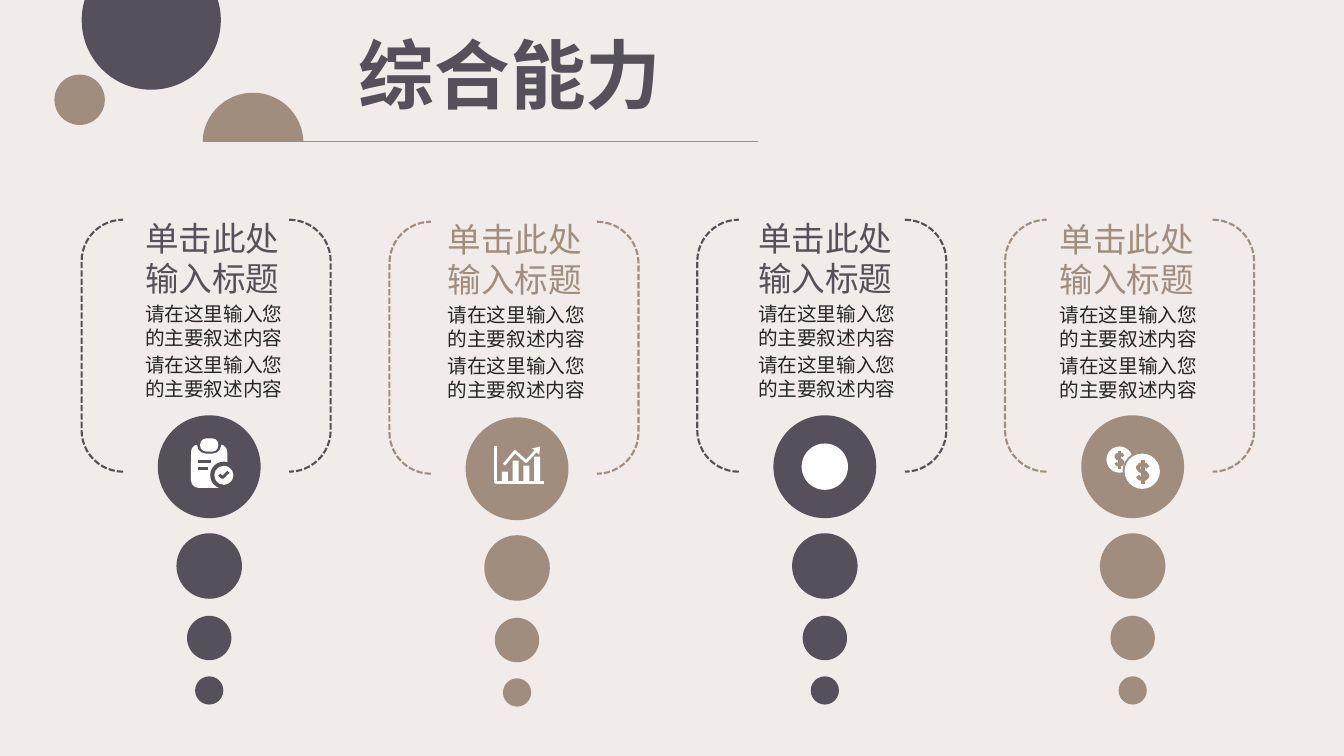
"""Build the four-column ability slide with bubbles and icons."""
import math

import pptx
import pptx.dml.color
import pptx.enum.dml
import pptx.enum.shapes
import pptx.enum.text
import pptx.oxml
import pptx.oxml.ns
import pptx.util

WIDTH, HEIGHT = 13.33, 7.5
FONT = "Noto Sans CJK SC"
COLOURS = {"background": "F1ECE9", "plum": "56505A", "tan": "A08D7E",
           "white": "FEFEFE", "body": "262626"}
TITLE = "综合能力"
HEADING = "单击此处输入标题"
BODY = "请在这里输入您的主要叙述内容"
TITLE_FORMAT = {"size": pptx.util.Pt(54), "bold": True}
HEADING_FORMAT = {"size": pptx.util.Pt(24)}
BODY_FORMAT = {"size": pptx.util.Pt(14)}

DOLLAR_CURVE = [(0.42, -0.35), (0.25, -0.58), (-0.2, -0.6), (-0.42, -0.35),
                (-0.25, -0.1), (0.25, 0.1), (0.42, 0.35), (0.2, 0.6),
                (-0.25, 0.58), (-0.42, 0.35)]
DOLLAR_BAR = [(0, -1), (0, 1)]


def dollar(x, y, half_height, weight):
    """Return the strokes of a dollar sign centred on a point."""
    return [("stroke", [(x + half_height * px, y + half_height * py) for px, py in points],
             "ground", weight) for points in (DOLLAR_CURVE, DOLLAR_BAR)]


CLIPBOARD = [
    ("ROUNDED_RECTANGLE", (0.33, 0.29, 0.36, 0.43), "white", 0.2),
    ("ROUNDED_RECTANGLE", (0.39, 0.2, 0.24, 0.18), "ground", 0.5),
    ("ROUNDED_RECTANGLE", (0.42, 0.23, 0.18, 0.13), "white", 0.45),
    ("stroke", [(0.4, 0.46), (0.53, 0.46)], "ground", 2),
    ("stroke", [(0.4, 0.53), (0.5, 0.53)], "ground", 2),
    ("OVAL", (0.52, 0.46, 0.27, 0.27), "ground", None),
    ("OVAL", (0.56, 0.5, 0.19, 0.19), "white", None),
    ("stroke", [(0.61, 0.59), (0.64, 0.62), (0.7, 0.56)], "ground", 2),
]
BAR_TOPS = [0.54, 0.43, 0.48, 0.39]
CHART = [
    ("stroke", [(0.3, 0.29), (0.3, 0.65), (0.78, 0.65)], "white", 2.2),
    *[("RECTANGLE", (0.36 + 0.107 * index, top, 0.06, 0.65 - top), "white", None)
      for index, top in enumerate(BAR_TOPS)],
    ("stroke", [(0.38, 0.47), (0.49, 0.34), (0.6, 0.44), (0.7, 0.33)], "white", 2),
    ("polygon", [(0.66, 0.31), (0.74, 0.29), (0.73, 0.37)], "white", None),
]
PLAIN_MARK = [("OVAL", (0.28, 0.28, 0.46, 0.46), "white", None)]
COINS = [
    ("OVAL", (0.25, 0.31, 0.26, 0.26), "white", None),
    *dollar(0.38, 0.44, 0.09, 2),
    ("OVAL", (0.41, 0.36, 0.39, 0.39), "ground", None),
    ("OVAL", (0.43, 0.38, 0.35, 0.35), "white", None),
    *dollar(0.61, 0.56, 0.12, 2.6),
]
COLUMNS = [("plum", CLIPBOARD, 0, 1.34, 2.11), ("tan", CHART, 0.02, 4.34, 2.12),
           ("plum", PLAIN_MARK, 0, 7.42, 2.11), ("tan", COINS, 0, 10.41, 2.12)]
FIRST_LEFT, COLUMN_STEP = 0.81, 3.053
BRACKET_TOP, BRACKET_WIDTH, BRACKET_HEIGHT = 2.18, 2.47, 2.5
BUBBLES = [(5.29, 0.65), (6.11, 0.44), (6.71, 0.28)]
DISC_TOP, DISC_SIZE = 4.12, 1.02

presentation = pptx.Presentation()
presentation.slide_width = pptx.util.Inches(WIDTH)
presentation.slide_height = pptx.util.Inches(HEIGHT)
slide = presentation.slides.add_slide(presentation.slide_layouts[6])


def colour(name):
    return pptx.dml.color.RGBColor.from_string(COLOURS[name])


def paint(shape, fill=None, line=None, weight=1.5):
    shape.shadow.inherit = False
    for part, name in ((shape.fill, fill), (shape.line.fill, line)):
        if name:
            part.solid()
            part.fore_color.rgb = colour(name)
        else:
            part.background()
    if line:
        shape.line.width = pptx.util.Pt(weight)
    return shape


def add_preset(kind, box, **look):
    preset = getattr(pptx.enum.shapes.MSO_SHAPE, kind)
    return paint(slide.shapes.add_shape(preset, *map(pptx.util.Inches, box)), **look)


def add_outline(points, close=True, **look):
    places = [(pptx.util.Inches(x), pptx.util.Inches(y)) for x, y in points]
    builder = slide.shapes.build_freeform(*places[0], scale=1.0)
    builder.add_line_segments(places[1:], close=close)
    return paint(builder.convert_to_shape(), **look)


def add_cut_circle(x, y, radius, cut, sweep, fill):
    """Draw the part of a circle that lies on one side of a level cut."""
    first = math.asin((cut - y) / radius)
    last = math.radians(sweep) - first
    angles = [first + (last - first) * step / 60 for step in range(61)]
    add_outline([(x + radius * math.cos(angle), y + radius * math.sin(angle))
                 for angle in angles], fill=fill)


def add_text(box, wrap, rows):
    frame = slide.shapes.add_textbox(*map(pptx.util.Inches, box)).text_frame
    frame.word_wrap = wrap
    frame.auto_size = pptx.enum.text.MSO_AUTO_SIZE.SHAPE_TO_FIT_TEXT
    for index, (text, tint, formats, space) in enumerate(rows):
        paragraph = frame.add_paragraph() if index else frame.paragraphs[0]
        paragraph.space_before = pptx.util.Pt(space)
        run = paragraph.add_run()
        run.text = text
        for name, value in {"name": FONT, **formats}.items():
            setattr(run.font, name, value)
        run.font.color.rgb = colour(tint)
        east_asian = pptx.oxml.parse_xml(
            f'<a:ea {pptx.oxml.ns.nsdecls("a")} typeface="{FONT}"/>')
        run.font._element.find(pptx.oxml.ns.qn("a:latin")).addnext(east_asian)


def add_icon(parts, left, top, ground):
    for kind, places, name, detail in parts:
        tint = ground if name == "ground" else name
        if kind in ("stroke", "polygon"):
            points = [(left + x, top + y) for x, y in places]
            if kind == "stroke":
                add_outline(points, close=False, line=tint, weight=detail)
            else:
                add_outline(points, fill=tint)
        else:
            x, y, width, height = places
            shape = add_preset(kind, (left + x, top + y, width, height), fill=tint)
            if detail:
                shape.adjustments[0] = detail


slide.background.fill.solid()
slide.background.fill.fore_color.rgb = colour("background")
add_cut_circle(1.5, 0.2, 0.69, 0, 180, "plum")
add_preset("OVAL", (0.54, 0.74, 0.5, 0.5), fill="tan")
add_cut_circle(2.51, 1.42, 0.5, 1.4, -180, "tan")
rule = slide.shapes.add_connector(pptx.enum.shapes.MSO_CONNECTOR.STRAIGHT,
                                  *map(pptx.util.Inches, (2.01, 1.4, 7.52, 1.4)))
rule.line.color.rgb = colour("tan")
rule.line.width = pptx.util.Pt(0.5)
rule._element.spPr.append(pptx.oxml.parse_xml(
    f'<a:effectLst {pptx.oxml.ns.nsdecls("a")}/>'))
add_text((3.46, 0.23, 3.25, 1.01), False, [(TITLE, "plum", TITLE_FORMAT, 0)])

for index, (tint, icon, drop, text_left, text_top) in enumerate(COLUMNS):
    left = FIRST_LEFT + index * COLUMN_STEP
    middle = left + BRACKET_WIDTH / 2 + 0.03
    bracket = add_preset("DOUBLE_BRACKET",
                         (left, BRACKET_TOP + drop, BRACKET_WIDTH, BRACKET_HEIGHT), line=tint)
    bracket.line.dash_style = pptx.enum.dml.MSO_LINE.SQUARE_DOT
    for top, size in [(DISC_TOP, DISC_SIZE), *BUBBLES]:
        add_preset("OVAL", (middle - size / 2, top + drop, size, size), fill=tint)
    add_icon(icon, middle - DISC_SIZE / 2, DISC_TOP + drop, tint)
    add_text((text_left, text_top, 1.58, 1.95), True,
             [(HEADING, tint, HEADING_FORMAT, 4.8), (BODY, "body", BODY_FORMAT, 2.8),
              (BODY, "body", BODY_FORMAT, 2.8)])

presentation.save("out.pptx")
